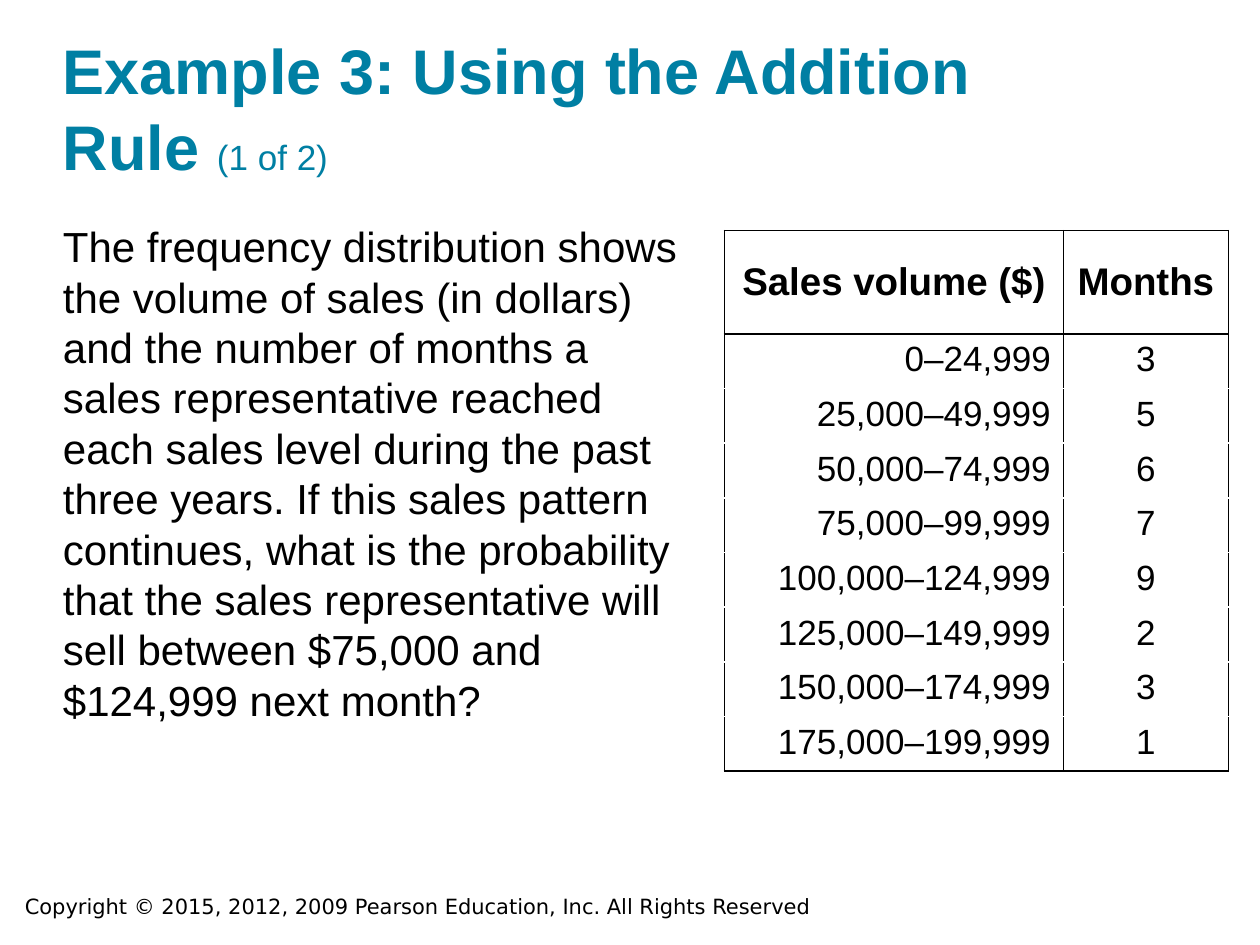
from lxml import etree
from pptx import Presentation
from pptx import util as u
from pptx.dml.color import RGBColor
from pptx.enum import text
from pptx.oxml.ns import qn

BLACK = RGBColor(0, 0, 0)
TEAL = RGBColor(0x00, 0x7F, 0xA3)
WHITE = RGBColor(0xFF, 0xFF, 0xFF)
LEFT, CENTER, RIGHT = (text.PP_ALIGN.LEFT, text.PP_ALIGN.CENTER,
                       text.PP_ALIGN.RIGHT)
FRAME = {"margin_left": 0, "margin_right": 0, "margin_top": 0,
         "margin_bottom": 0}

TITLE = "Example 3: Using the Addition Rule "
QUESTION = ("The frequency distribution shows the volume of sales (in dollars) "
            "and the number of months a sales representative reached each sales "
            "level during the past three years. If this sales pattern continues, "
            "what is the probability that the sales representative will sell "
            "between $75,000 and $124,999 next month?")
COPYRIGHT = ("Copyright © 2015, 2012, 2009 Pearson Education, Inc. "
             "All Rights Reserved")
ROWS = [
    ("Sales volume ($)", "Months"),
    ("0–24,999", "3"),
    ("25,000–49,999", "5"),
    ("50,000–74,999", "6"),
    ("75,000–99,999", "7"),
    ("100,000–124,999", "9"),
    ("125,000–149,999", "2"),
    ("150,000–174,999", "3"),
    ("175,000–199,999", "1"),
]


def set_attrs(obj, values):
    for name, value in values.items():
        setattr(obj, name, value)


def add_run(p, content, size, color=BLACK, bold=False, name="Arial"):
    r = p.add_run()
    r.text = content
    set_attrs(r.font, {"size": u.Pt(size), "bold": bold, "name": name})
    r.font.color.rgb = color


def add_text(s, box, runs, frame):
    tf = s.shapes.add_textbox(*map(u.Cm, box)).text_frame
    set_attrs(tf, {"word_wrap": True, **frame})
    p = tf.paragraphs[0]
    p.alignment = LEFT
    for run in runs:
        add_run(p, **run)


def add_borders(cell, sides):
    tc_pr = cell._tc.get_or_add_tcPr()
    for i, side in enumerate(sides):
        ln = etree.Element(qn(f"a:ln{side}"), w=str(u.Pt(1)))
        fill = etree.SubElement(ln, qn("a:solidFill"))
        etree.SubElement(fill, qn("a:srgbClr"), val=str(BLACK))
        tc_pr.insert(i, ln)


def fill_cell(cell, content, row, col):
    header = row == 0
    cell.text_frame.word_wrap = True
    if header:
        cell.vertical_anchor = text.MSO_ANCHOR.MIDDLE
        cell.fill.solid()
        cell.fill.fore_color.rgb = WHITE
    else:
        cell.fill.background()
    p = cell.text_frame.paragraphs[0]
    p.alignment = CENTER if header or col == 1 else RIGHT
    add_run(p, content, 22 if header else 20, bold=header)
    sides = ["L", "R"]
    if row < 2:
        sides.append("T")
    if row in (0, 1, len(ROWS) - 1):
        sides.append("B")
    add_borders(cell, sides)


def add_sales_table(s):
    widths, heights = (6.84, 3.32), [2.08] + [1.1] * (len(ROWS) - 1)
    box = (14.6, 4.65, sum(widths), sum(heights))
    tbl = s.shapes.add_table(len(ROWS), 2, *map(u.Cm, box)).table
    set_attrs(tbl, {"first_row": False, "horz_banding": False})
    for column, width in zip(tbl.columns, widths):
        column.width = u.Cm(width)
    for i, (row, height) in enumerate(zip(tbl.rows, heights)):
        row.height = u.Cm(height)
        for j, cell in enumerate(row.cells):
            fill_cell(cell, ROWS[i][j], i, j)


def main():
    prs = Presentation()
    set_attrs(prs, {"slide_width": u.Cm(25.4), "slide_height": u.Cm(19.05)})
    s = prs.slides.add_slide(prs.slide_layouts[6])
    add_text(s, (0.25, 17.88, 19.9, 0.77),
             [{"content": COPYRIGHT, "size": 12, "name": "DejaVu Sans"}], {})
    add_text(s, (1.27, 0.64, 20.32, 3.05),
             [{"content": TITLE, "size": 36, "color": TEAL, "bold": True},
              {"content": "(1 of 2)", "size": 20, "color": TEAL}],
             {**FRAME, "vertical_anchor": text.MSO_ANCHOR.BOTTOM})
    add_text(s, (1.27, 4.45, 12.7, 10.36),
             [{"content": QUESTION, "size": 24}], FRAME)
    add_sales_table(s)
    prs.save("out.pptx")


if __name__ == "__main__":
    main()
